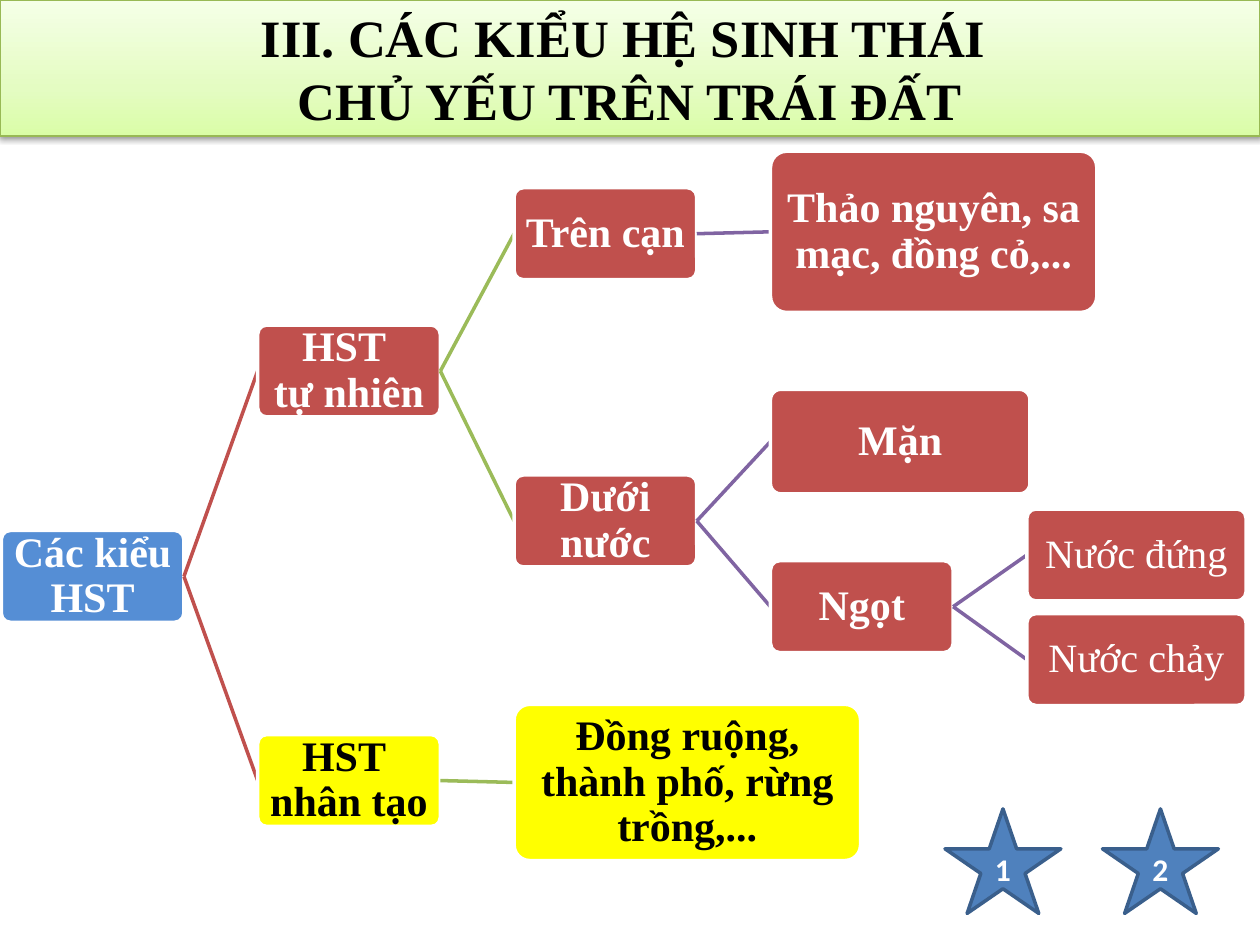
from dataclasses import dataclass

from pptx import Presentation
from pptx import util as u
from pptx.dml.color import RGBColor
from pptx.enum import shapes, text
from pptx.oxml import parse_xml
from pptx.oxml.ns import nsdecls


@dataclass(frozen=True)
class Theme:
    """Hold the colours, fonts and type sizes."""
    serif: str = "Times New Roman"
    sans: str = "Calibri"
    title: int = 30
    body: int = 24
    leaf: int = 23
    mark: int = 18
    white: str = "FFFFFF"
    black: str = "000000"
    blue: str = "558ED5"
    red: str = "C0504D"
    gold: str = "FFFF00"
    star: str = "4F81BD"
    rim: str = "3A5F8C"
    edge: str = "98B955"
    fade: tuple = ((0, "DAFDA7"), (35, "E4FCC2"), (100, "F5FFE7"))
    links: tuple = ("C0504D", "9BBB59", "8064A2", "8064A2")


@dataclass(frozen=True)
class Node:
    """Describe one box of the tree and its branches."""
    label: str
    top: float
    fill: str
    wide: float = 1.45
    high: float = 0.73
    size: int = Theme.body
    kids: tuple = ()


T = Theme()
TREE = Node("Các kiểu HST", 3.01, T.blue, kids=(
    Node("HST \ntự nhiên", 1.38, T.red, kids=(
        Node("Trên cạn", 0.29, T.red, kids=(
            Node("Thảo nguyên, sa mạc, đồng cỏ,...", 0, T.red, 2.59, 1.28),)),
        Node("Dưới nước", 2.57, T.red, kids=(
            Node("Mặn", 1.89, T.red, 2.06, 0.83),
            Node("Ngọt", 3.25, T.red, kids=(
                Node("Nước đứng", 2.84, T.red, 1.74, size=T.leaf),
                Node("Nước chảy", 3.67, T.red, 1.74, size=T.leaf))))))),
    Node("HST \nnhân tạo", 4.63, T.gold, kids=(
        Node("Đồng ruộng, thành phố, rừng trồng,...", 4.39, T.gold, 2.75, 1.24),))))


def shade(item, code):
    """Give a fill or line a solid colour."""
    item.solid()
    item.fore_color.rgb = RGBColor.from_string(code)


def block(slide, kind, box, fill, line, width):
    """Add a flat shape with a fill and an outline."""
    shape = slide.shapes.add_shape(kind, *map(u.Inches, box))
    shape.shadow.inherit = False
    shade(shape.fill, fill)
    shade(shape.line.fill, line)
    shape.line.width = u.Pt(width)
    return shape


def write(shape, words, size, color, face=T.serif, bold=True):
    """Write one centred paragraph in a shape."""
    frame = shape.text_frame
    frame.word_wrap = True
    frame.vertical_anchor = text.MSO_ANCHOR.MIDDLE
    para = frame.paragraphs[0]
    para.text = words
    para.alignment = text.PP_ALIGN.CENTER
    font = para.font
    font.name, font.size, font.bold = face, u.Pt(size), bold
    font.color.rgb = RGBColor.from_string(color)
    return para


def banner(slide, box):
    """Place the title band with its gradient and shadow."""
    band = block(slide, shapes.MSO_SHAPE.RECTANGLE, box, T.white, T.edge, 0.75)
    band.fill.gradient()
    band.fill.gradient_angle = 90
    stops = band._element.spPr.find(".//{*}gsLst")
    for stop in list(stops):
        stops.remove(stop)
    for place, code in T.fade:
        stops.append(parse_xml(
            f'<a:gs {nsdecls("a")} pos="{place * 1000}"><a:srgbClr val="{code}"/></a:gs>'))
    band._element.spPr.find("{*}effectLst").append(parse_xml(
        f'<a:outerShdw {nsdecls("a")} blurRad="{u.Pt(3.1)}" dist="{u.Pt(1.6)}" dir="5400000" '
        f'rotWithShape="0"><a:srgbClr val="{T.black}"><a:alpha val="38000"/></a:srgbClr>'
        '</a:outerShdw>'))
    write(band, "III. CÁC KIỂU HỆ SINH THÁI \nCHỦ YẾU TRÊN TRÁI ĐẤT", T.title, T.black)


def join(slide, start, end, color):
    """Link two boxes from right side to left side, behind the second."""
    link = slide.shapes.add_connector(shapes.MSO_CONNECTOR.STRAIGHT, 0, 0, 0, 0)
    link.begin_connect(start, 3)
    link.end_connect(end, 1)
    shade(link.line.fill, color)
    link.line.width = u.Pt(2)
    link._element.spPr.append(parse_xml(f'<a:effectLst {nsdecls("a")}/>'))
    end._element.addprevious(link._element)


def branch(slide, box, node, depth=0):
    """Place a node and all its branches, one column for each depth."""
    left, top, wide, _ = box
    spot = (left + depth * wide / 4.86, top + node.top, node.wide, node.high)
    shape = block(slide, shapes.MSO_SHAPE.ROUNDED_RECTANGLE, spot, node.fill, T.white, 2)
    shape.adjustments[0] = 0.1
    frame = shape.text_frame
    frame.margin_left = frame.margin_right = u.Inches(0.04)
    frame.margin_top = frame.margin_bottom = u.Inches(0.04)
    color = T.black if node.fill == T.gold else T.white
    para = write(shape, node.label, node.size, color, bold=node.size == T.body)
    para.line_spacing = 0.9
    for kid in node.kids:
        join(slide, shape, branch(slide, box, kid, depth + 1), T.links[depth])
    return shape


def stars(slide, box):
    """Place the numbered stars at both ends of a box."""
    left, top, wide, high = box
    size = 0.92
    for step, label in enumerate("12"):
        spot = (left + step * (wide - size), top, size, high)
        shape = block(slide, shapes.MSO_SHAPE.STAR_5_POINT, spot, T.star, T.rim, 2)
        write(shape, label, T.mark, T.white, T.sans)


def main():
    """Build and save the slide."""
    deck = Presentation()
    deck.slide_width, deck.slide_height = u.Inches(10), u.Inches(7.5)
    slide = deck.slides.add_slide(deck.slide_layouts[6])
    branch(slide, (0.01, 1.2, 9.89, 5.63), TREE)
    banner(slide, (0, 0, 10, 1.08))
    stars(slide, (7.5, 6.42, 2.17, 0.83))
    deck.save("out.pptx")


if __name__ == "__main__":
    main()
